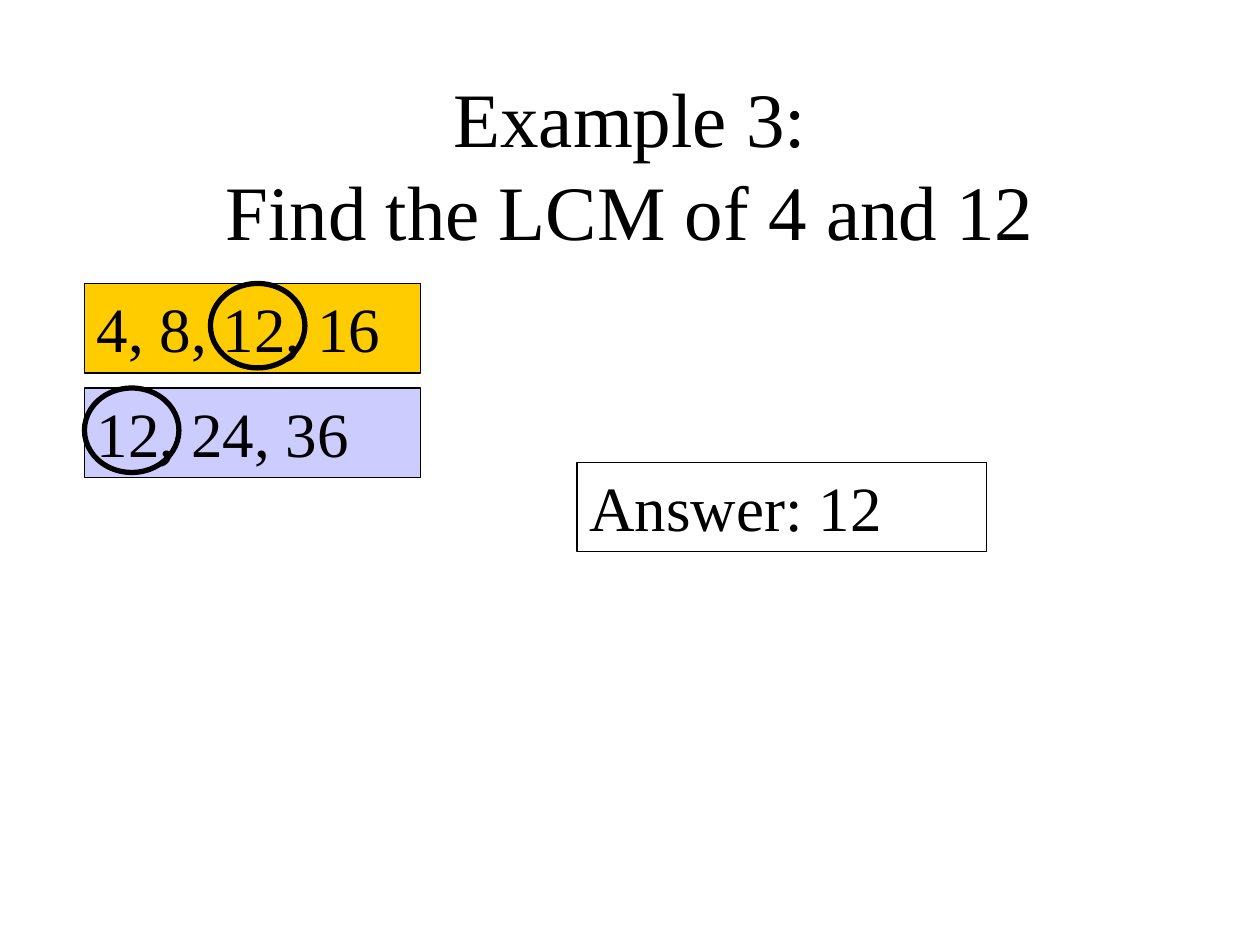
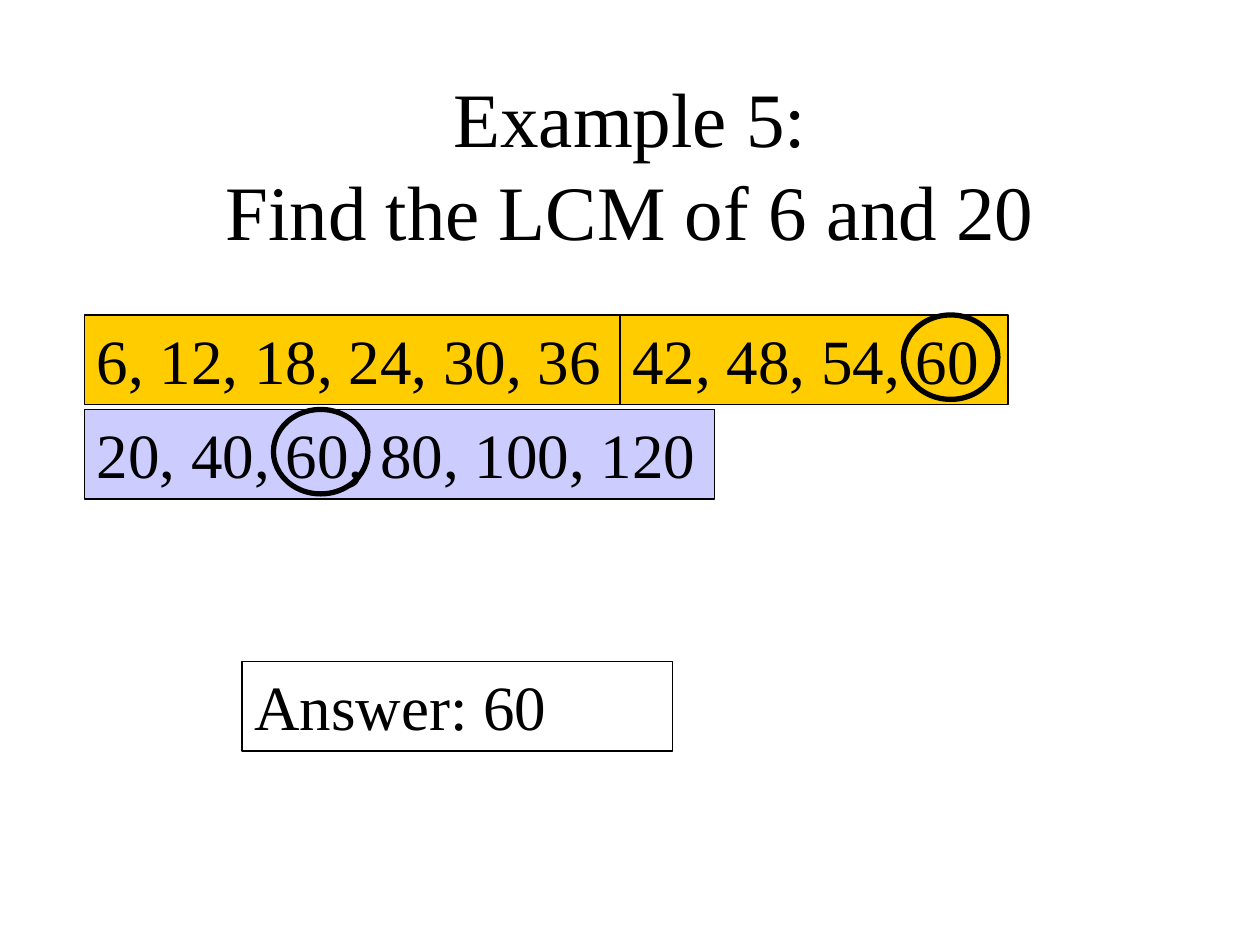
from dataclasses import dataclass
from typing import Optional

from pptx import Presentation
from pptx.dml.color import RGBColor
from pptx.enum.shapes import MSO_SHAPE
from pptx.enum.text import MSO_ANCHOR as ANCHOR, MSO_AUTO_SIZE as AUTO, PP_ALIGN as ALIGN
from pptx.util import Inches, Pt

COLORS = {"ink": "000000", "first": "FFCC00", "second": "CCCCFF", "paper": "FFFFFF"}
FONT = "Times New Roman"
LEFT = 0.67
BOX_HEIGHT = 0.71
RING_WIDTH, RING_HEIGHT = 0.75, 0.67


@dataclass(frozen=True)
class Box:
    text: str
    left: float
    top: float
    width: float
    fill: Optional[str] = None


@dataclass(frozen=True)
class Ring:
    left: float
    top: float


@dataclass(frozen=True)
class Example:
    number: int
    a: int
    b: int
    boxes: tuple[Box, ...]
    rings: tuple[Ring, ...]
    answer: Box


EXAMPLES = (
    Example(
        3, 4, 12,
        (Box("4, 8, 12, 16", LEFT, 2.25, 2.67, "first"),
         Box("12, 24, 36", LEFT, 3.08, 2.67, "second")),
        (Ring(1.67, 2.25), Ring(LEFT, 3.08)),
        Box("Answer: 12", 4.58, 3.67, 3.25),
    ),
    Example(
        5, 6, 20,
        (Box("6, 12, 18, 24, 30, 36", LEFT, 2.5, 4.5, "first"),
         Box("20, 40, 60, 80, 100, 120", LEFT, 3.25, 5, "second"),
         Box("42, 48, 54, 60", 4.92, 2.5, 3.08, "first")),
        (Ring(7.17, 2.5), Ring(2.17, 3.25)),
        Box("Answer: 60", 1.92, 5.25, 3.42, "paper"),
    ),
)


def color(name: str) -> RGBColor:
    return RGBColor.from_string(COLORS[name])


def write(sp, text: str, *, size: float, align=ALIGN.LEFT, anchor=ANCHOR.TOP,
          auto_size=AUTO.NONE) -> None:
    tf = sp.text_frame
    tf.word_wrap = True
    tf.auto_size = auto_size
    tf.vertical_anchor = anchor
    p = tf.paragraphs[0]
    p.text = text
    p.alignment = align
    for r in p.runs:
        r.font.name = FONT
        r.font.size = Pt(size)
        r.font.color.rgb = color("ink")


def add_outlined(s, kind, left: float, top: float, width: float, height: float, *,
                 line: float, fill: Optional[str] = None):
    sp = s.shapes.add_shape(kind, Inches(left), Inches(top), Inches(width), Inches(height))
    sp.shadow.inherit = False
    sp.line.color.rgb = color("ink")
    sp.line.width = Pt(line)
    if fill:
        sp.fill.solid()
        sp.fill.fore_color.rgb = color(fill)
    else:
        sp.fill.background()
    return sp


def add_box(s, box: Box) -> None:
    sp = add_outlined(s, MSO_SHAPE.RECTANGLE, box.left, box.top, box.width, BOX_HEIGHT,
                      line=0.75, fill=box.fill)
    write(sp, box.text, size=36, auto_size=AUTO.SHAPE_TO_FIT_TEXT)


def add_ring(s, ring: Ring) -> None:
    add_outlined(s, MSO_SHAPE.OVAL, ring.left, ring.top, RING_WIDTH, RING_HEIGHT, line=3)


def add_title(s, text: str) -> None:
    sp = s.shapes.title
    sp.left, sp.top = Inches(0.75), Inches(0.67)
    sp.width, sp.height = Inches(8.5), Inches(1.25)
    write(sp, text, size=44, align=ALIGN.CENTER, anchor=ANCHOR.MIDDLE)


def add_example(prs, example: Example) -> None:
    s = prs.slides.add_slide(prs.slide_layouts.get_by_name("Title Only"))
    s.background.fill.solid()
    s.background.fill.fore_color.rgb = color("paper")
    add_title(s, f"Example {example.number}:\vFind the LCM of {example.a} and {example.b}")
    for box in example.boxes:
        add_box(s, box)
    for ring in example.rings:
        add_ring(s, ring)
    add_box(s, example.answer)


def main() -> None:
    prs = Presentation()
    prs.slide_width, prs.slide_height = Inches(10), Inches(7.5)
    for example in EXAMPLES:
        add_example(prs, example)
    prs.save("out.pptx")


if __name__ == "__main__":
    main()
